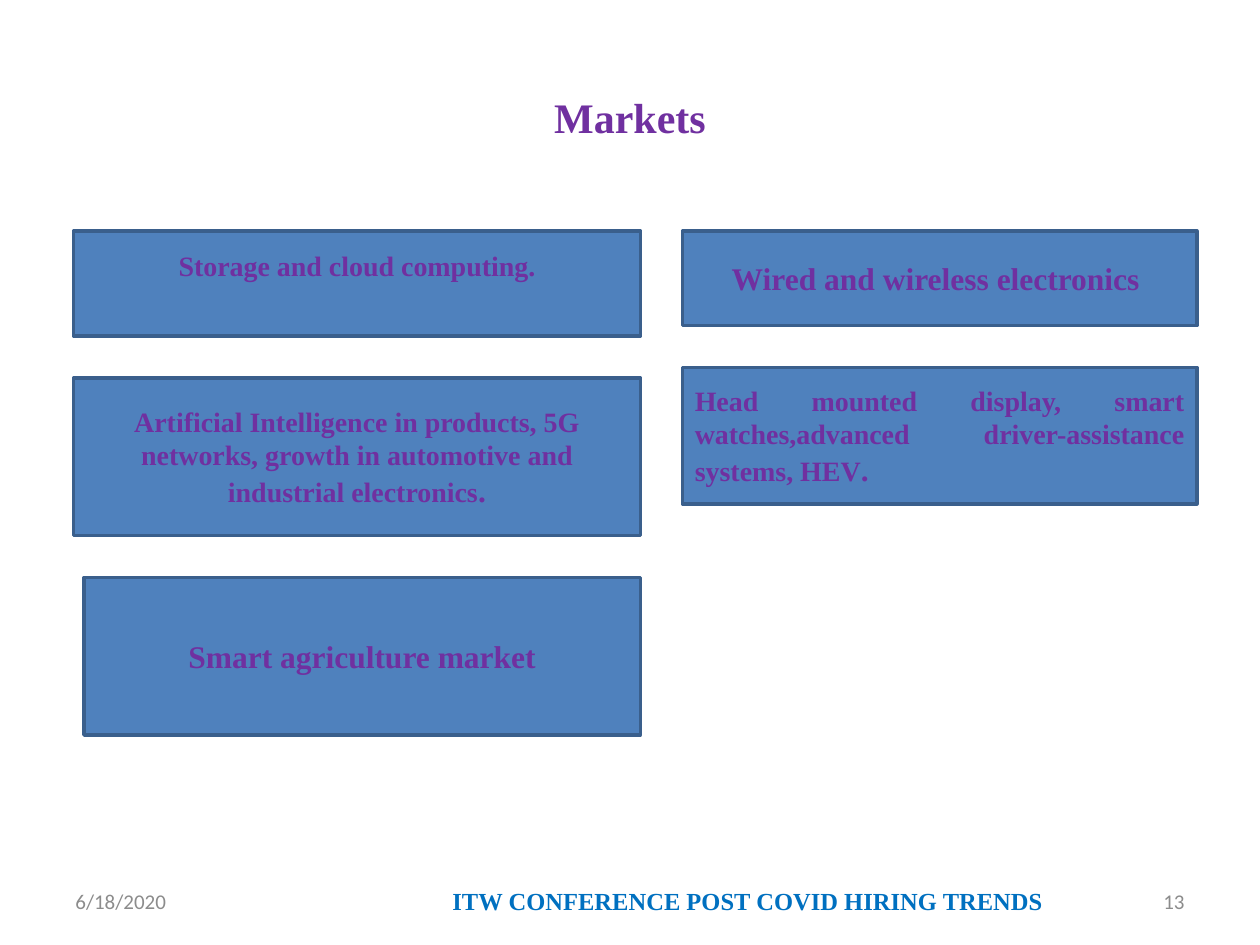
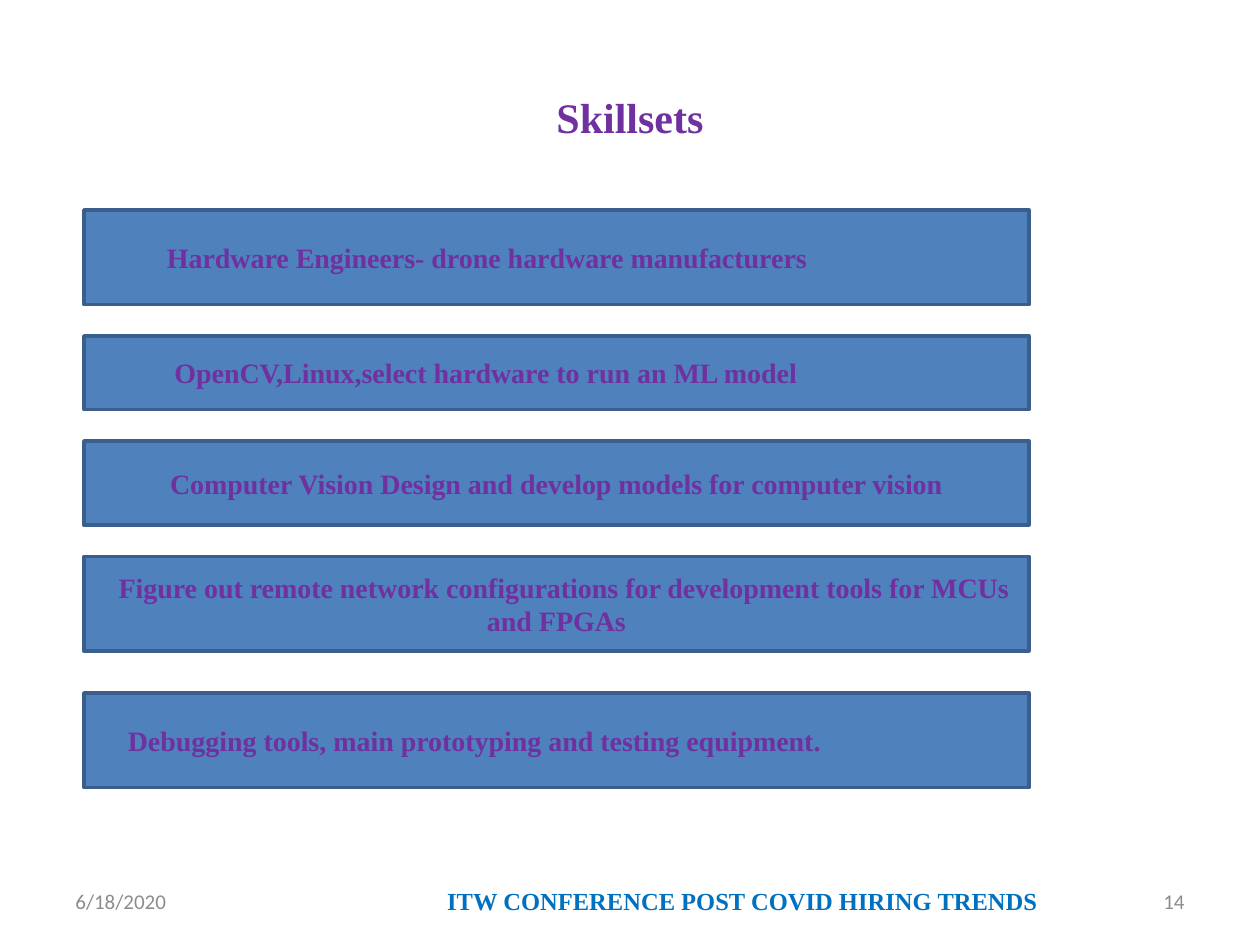
import dataclasses

import pptx
import pptx.dml.color
import pptx.enum.shapes
import pptx.enum.text
import pptx.util

ALIGN = pptx.enum.text.PP_ALIGN
TITLE_ONLY = 5

# The slide is a grid of 120 columns by 90 rows
WIDTH, HEIGHT = pptx.util.Inches(10), pptx.util.Inches(7.5)
COLUMN, ROW = WIDTH / 120, HEIGHT / 90


@dataclasses.dataclass(frozen=True)
class Theme:
    serif: str = "Times New Roman"
    sans: str = "Calibri"
    purple: str = "7030A0"
    box_fill: str = "4F81BD"
    box_line: str = "3A5F8C"
    footer_blue: str = "0070C0"
    footer_grey: str = "8C8C8C"
    title_size: int = 24
    large_size: int = 18
    body_size: int = 16
    event_size: int = 14
    footer_size: int = 12


THEME = Theme()


def rgb(value):
    return pptx.dml.color.RGBColor.from_string(value)


def place(column, row, columns, rows):
    """Turn grid units into left, top, width and height."""
    return (round(column * COLUMN), round(row * ROW),
            round(columns * COLUMN), round(rows * ROW))


def style_run(run, size, color=THEME.purple, font=THEME.serif, bold=True):
    run.font.size = pptx.util.Pt(size)
    run.font.name = font
    run.font.bold = bold
    run.font.color.rgb = rgb(color)


def write(frame, text, align, size, **style):
    """Fill a frame with one middle-anchored paragraph and return it."""
    frame.word_wrap = True
    frame.vertical_anchor = pptx.enum.text.MSO_ANCHOR.MIDDLE
    frame.text = text
    paragraph = frame.paragraphs[0]
    paragraph.alignment = align
    style_run(paragraph.runs[0], size, **style)
    return paragraph


def add_topic(slide, area, text, size=THEME.body_size, align=ALIGN.CENTER,
              indent=0, large_stop=False, lift=0):
    """Add a topic box; lift is extra room in inches below its text."""
    topic = slide.shapes.add_shape(
        pptx.enum.shapes.MSO_SHAPE.RECTANGLE, *place(*area))
    topic.shadow.inherit = False
    topic.fill.solid()
    topic.fill.fore_color.rgb = rgb(THEME.box_fill)
    topic.line.color.rgb = rgb(THEME.box_line)
    topic.line.width = pptx.util.Pt(2)
    topic.text_frame.margin_bottom = pptx.util.Inches(0.05 + lift)
    paragraph = write(topic.text_frame, text, align, size)
    if indent:
        properties = paragraph._p.get_or_add_pPr()
        properties.set("marL", "0")
        properties.set("indent", str(pptx.util.Inches(indent)))
    if large_stop:
        stop = paragraph.add_run()
        stop.text = "."
        style_run(stop, THEME.large_size)


def add_footer_text(slide, column, columns, text, align, size, **style):
    footer = slide.shapes.add_textbox(*place(column, 83.4, columns, 4.8))
    write(footer.text_frame, text, align, size, **style)


def add_titled_slide(deck, title, number, event_columns):
    """Add a slide with the shared title style and footers."""
    slide = deck.slides.add_slide(deck.slide_layouts[TITLE_ONLY])
    heading = slide.shapes.title
    heading.left, heading.top, heading.width, heading.height = place(6, 3.6, 108, 15)
    write(heading.text_frame, title, ALIGN.CENTER, THEME.title_size)

    quiet = dict(size=THEME.footer_size, color=THEME.footer_grey,
                 font=THEME.sans, bold=False)
    add_footer_text(slide, 6, 28, "6/18/2020", ALIGN.LEFT, **quiet)
    add_footer_text(slide, 86, 28, str(number), ALIGN.RIGHT, **quiet)
    add_footer_text(slide, 41, event_columns,
                    "ITW CONFERENCE POST COVID HIRING TRENDS ",
                    ALIGN.CENTER, THEME.event_size, color=THEME.footer_blue)
    return slide


def build_markets(deck):
    slide = add_titled_slide(deck, "Markets", 13, event_columns=61)
    # Left column
    add_topic(slide, (7, 22, 54, 10), "Storage and cloud computing.", lift=0.29)
    add_topic(slide, (7, 36, 54, 15),
              "Artificial Intelligence in products, 5G networks, growth in "
              "automotive and industrial electronics", large_stop=True)
    add_topic(slide, (8, 55, 53, 15), "Smart agriculture market",
              size=THEME.large_size)
    # Right column
    add_topic(slide, (65, 22, 49, 9), "Wired and wireless electronics ",
              size=THEME.large_size)
    add_topic(slide, (65, 35, 49, 13),
              "Head mounted display, smart watches,advanced driver-assistance "
              "systems, HEV", align=ALIGN.JUSTIFY, large_stop=True)


def build_skillsets(deck):
    slide = add_titled_slide(deck, "Skillsets", 14, event_columns=60)
    # Top row, rows, alignment, first-line indent in inches, text
    skills = [
        (20, 9, ALIGN.JUSTIFY, 0.56,
         "Hardware Engineers- drone hardware manufacturers"),
        (32, 7, ALIGN.JUSTIFY, 0.62,
         "OpenCV,Linux,select hardware to run an ML model"),
        (42, 8, ALIGN.CENTER, 0,
         "Computer Vision Design and develop models for computer vision"),
        (53, 9, ALIGN.CENTER, 0.12,
         "Figure out remote network configurations for development tools "
         "for MCUs and FPGAs"),
        (66, 9, ALIGN.JUSTIFY, 0.25,
         "Debugging tools, main prototyping and testing equipment."),
    ]
    for top, rows, align, indent, skill in skills:
        add_topic(slide, (8, top, 90, rows), skill, align=align, indent=indent)


def main():
    deck = pptx.Presentation()
    deck.slide_width, deck.slide_height = WIDTH, HEIGHT
    build_markets(deck)
    build_skillsets(deck)
    deck.save("out.pptx")


if __name__ == "__main__":
    main()
